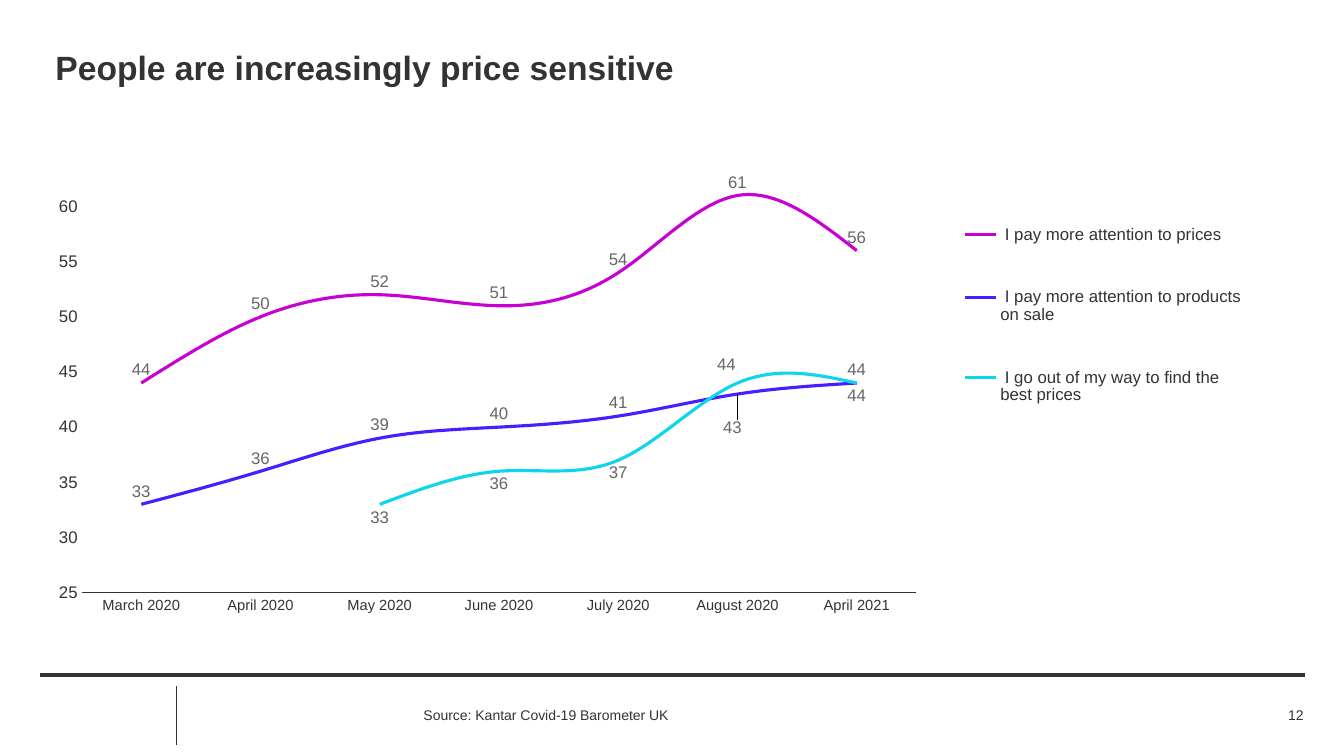
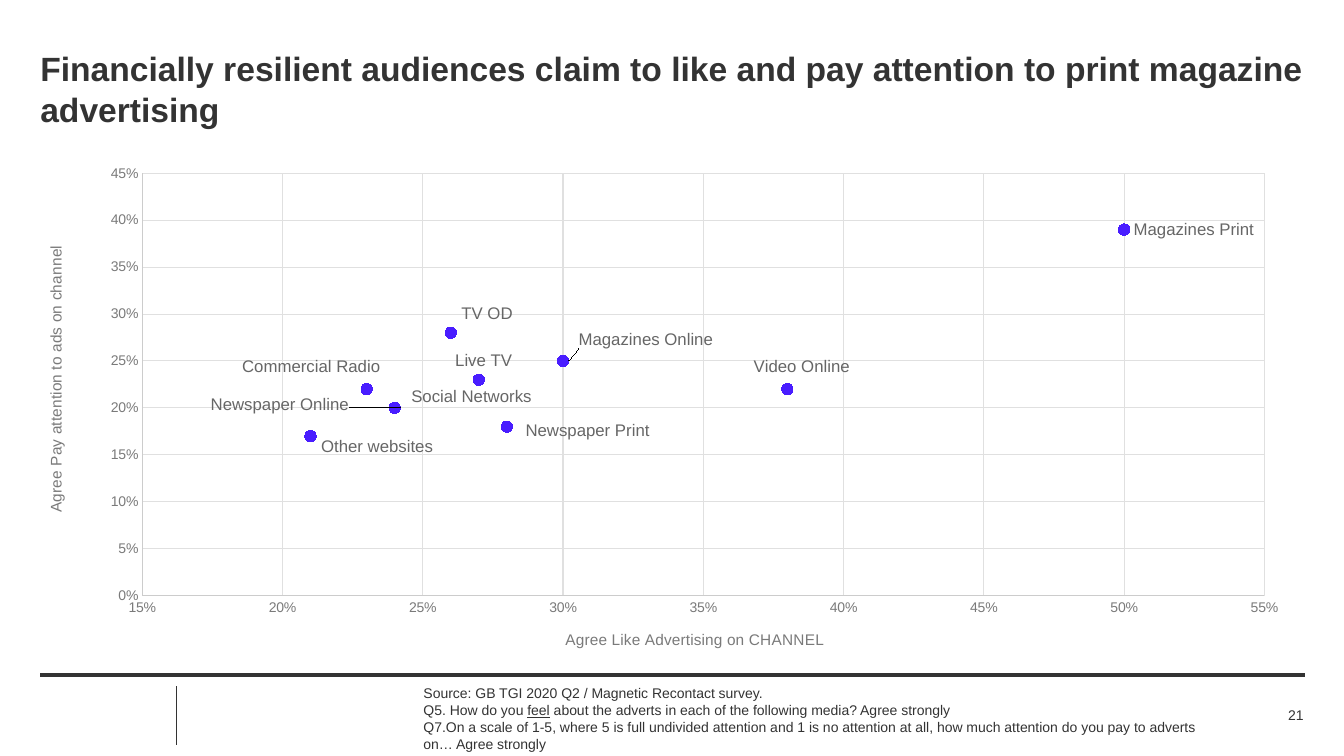
from lxml.etree import SubElement
from pptx import Presentation
from pptx.chart.data import CategoryChartData, XyChartData
from pptx.dml.color import RGBColor
from pptx.enum.chart import (XL_CHART_TYPE, XL_LABEL_POSITION, XL_LEGEND_POSITION,
                             XL_MARKER_STYLE, XL_TICK_MARK)
from pptx.enum.shapes import MSO_CONNECTOR
from pptx.enum.text import MSO_ANCHOR, MSO_AUTO_SIZE, PP_ALIGN
from pptx.oxml import parse_xml
from pptx.oxml.ns import nsdecls, qn
from pptx.util import Inches, Pt

INK = RGBColor(0x33, 0x33, 0x33)
LABEL_GREY = RGBColor(0x66, 0x66, 0x66)
AXIS_GREY = RGBColor(0x7A, 0x7A, 0x7A)
AXIS_LINE = RGBColor(0xCC, 0xCC, 0xCC)
GRID_LINE = RGBColor(0xE0, 0xE0, 0xE0)
MAGENTA = RGBColor(0xC7, 0x00, 0xD3)
VIOLET = RGBColor(0x49, 0x1D, 0xFF)
CYAN = RGBColor(0x0C, 0xD5, 0xED)
FONT = "Arial"
ABOVE, BELOW, RIGHT = (XL_LABEL_POSITION.ABOVE, XL_LABEL_POSITION.BELOW,
                       XL_LABEL_POSITION.RIGHT)
NO_LEADER_LINES = (
    f'<c:extLst {nsdecls("c")}><c:ext uri="{{CE6537A1-D6FC-4f65-9D91-7224C49458BB}}" '
    'xmlns:c15="http://schemas.microsoft.com/office/drawing/2012/chart">'
    '<c15:showLeaderLines val="0"/></c:ext></c:extLst>')

# Boxes are left, top, width, height in inches; label shifts are inches too.
PAGE_BOX = (11.87, 6.98, 1.06, 0.22)
FOOTER_RULES = [((1.75, 6.81), (1.75, 7.39), 1), ((0.4, 6.7), (12.94, 6.7), 3)]

PRICE = {
    "title": "People are increasingly price sensitive",
    "title_box": (0.55, 0.47, 12.54, 0.44),
    "source": [["Source: Kantar Covid-19 Barometer UK"]],
    "source_box": (4.2, 6.98, 7.58, 0.22),
    "page": "12",
    "chart_box": (0.31, 1.55, 12.31, 5.44),
    "plot_box": (0.81, 1.83, 8.28, 4.05),
    "legend_box": (9.5, 1.8, 2.88, 2.65),
    "months": ["March 2020", "April 2020", "May 2020", "June 2020", "July 2020",
               "August 2020", "April 2021"],
    # name, values, colour, label side, August label side and shift
    "answers": [
        (" I pay more attention to prices",
         (44, 50, 52, 51, 54, 61, 56), MAGENTA, ABOVE, None),
        (" I pay more attention to products on sale",
         (33, 36, 39, 40, 41, 43, 44), VIOLET, ABOVE, (BELOW, -0.05, 0.21)),
        (" I go out of my way to find the best prices",
         (None, None, 33, 36, 37, 44, 44), CYAN, BELOW, (ABOVE, -0.11, -0.05)),
    ],
}
AUGUST = PRICE["months"].index("August 2020")

MEDIA = {
    "title": "Financially resilient audiences claim to like and pay attention "
             "to print magazine advertising",
    "title_box": (0.4, 0.48, 12.54, 0.44),
    "source": [
        ["Source: GB TGI 2020 Q2 / Magnetic Recontact survey."],
        ["Q5. How do you ", ("feel",),
         " about the adverts in each of the following media? Agree strongly"],
        ["Q7.On a scale of 1-5, where 5 is full undivided attention and 1 is no attention "
         "at all, how much attention do you pay to adverts on… Agree strongly"],
    ],
    "source_box": (4.2, 6.98, 7.68, 0.29),
    "page": "21",
    "chart_box": (0.39, 1.54, 12.54, 5.11),
    "plot_box": (1.41, 1.72, 11.13, 4.19),
    # title, title box, minimum, maximum
    "axes": [
        ("Agree Like Advertising on CHANNEL", (5.58, 6.21, 2.57, 0.18), 0.15, 0.55),
        ("Agree Pay attention to ads on channel", (0.42, 2.41, 0.18, 2.66), 0, 0.45),
    ],
    # channel, like, attention, label shift
    "channels": [
        ("Magazines Online", 0.3, 0.25, (0.06, -0.21)),
        ("Live TV", 0.27, 0.23, (-0.33, -0.19)),
        ("TV OD", 0.26, 0.28, (0.01, -0.19)),
        ("Video Online", 0.38, 0.22, (-0.43, -0.22)),
        ("Magazines Print", 0.5, 0.39, (0, 0)),
        ("Newspaper Print", 0.28, 0.18, (0.09, 0.04)),
        ("Commercial Radio", 0.23, 0.22, (-1.33, -0.22)),
        ("Social Networks", 0.24, 0.2, (0.07, -0.11)),
        ("Newspaper Online", 0.24, 0.2, (-1.92, -0.03)),
        ("Other websites", 0.21, 0.17, (0.01, 0.11)),
    ],
}


def inches(box):
    return [Inches(length) for length in box]


def style_font(font, size, color=INK, **more):
    for name, value in {"name": FONT, "size": Pt(size), **more}.items():
        setattr(font, name, value)
    font.color.rgb = color


def style_line(line, color, width):
    line.color.rgb = color
    line.width = Pt(width)


def style_frame(frame, anchor):
    settings = {"word_wrap": True, "auto_size": MSO_AUTO_SIZE.NONE, "vertical_anchor": anchor,
                "margin_left": 0, "margin_top": 0, "margin_right": 0, "margin_bottom": 0}
    for name, value in settings.items():
        setattr(frame, name, value)


def set_layout(element, **values):
    """Give a chart part a manual layout, in shares of the chart."""
    for old in element.findall(qn("c:layout")):
        element.remove(old)
    layout = parse_xml(f"<c:layout {nsdecls('c')}><c:manualLayout/></c:layout>")
    for tag, value in values.items():
        SubElement(layout[0], qn(f"c:{tag}"), val=str(value))
    element.insert(0 if element.tag == qn("c:plotArea") else 1, layout)


def place(element, box, chart_box, **target):
    """Lay out a chart part from its box on the slide."""
    left, top, width, height = chart_box
    set_layout(element, **target, xMode="edge", yMode="edge",
               x=(box[0] - left) / width, y=(box[1] - top) / height,
               w=box[2] / width, h=box[3] / height)


def shift_label(chart, chart_box, series_number, point, dx, dy):
    label, = chart.element.xpath(
        f'.//c:ser[{series_number}]/c:dLbls/c:dLbl[c:idx/@val="{point}"]')
    set_layout(label, x=dx / chart_box[2], y=dy / chart_box[3])


def hide_leader_lines(chart):
    for labels in chart.element.xpath(".//c:ser/c:dLbls"):
        labels.append(parse_xml(NO_LEADER_LINES))


def style_axis(axis, size, color, low=None, high=None, step=None, number_format=None):
    axis.major_tick_mark = axis.minor_tick_mark = XL_TICK_MARK.NONE
    style_font(axis.tick_labels.font, size, color)
    if step:
        axis.minimum_scale, axis.maximum_scale, axis.major_unit = low, high, step
        axis.tick_labels.number_format = number_format
        axis.tick_labels.number_format_is_linked = False


def add_footer_rules(slide, layout):
    """Draw the footer rules and hand them to the layout."""
    for start, end, width in FOOTER_RULES:
        rule = slide.shapes.add_connector(MSO_CONNECTOR.STRAIGHT, *inches(start + end))
        style_line(rule.line, INK, width)
        SubElement(rule.element.spPr, qn("a:effectLst"))
        layout.shapes.element.append(rule.element)


def add_text(slide, box, paragraphs, align=PP_ALIGN.LEFT):
    """Each paragraph is a list of runs; a run in a tuple is underlined."""
    frame = slide.shapes.add_textbox(*inches(box)).text_frame
    style_frame(frame, MSO_ANCHOR.MIDDLE)
    for number, runs in enumerate(paragraphs):
        paragraph = frame.add_paragraph() if number else frame.paragraphs[0]
        paragraph.alignment = align
        for text in runs:
            run = paragraph.add_run()
            underlined = isinstance(text, tuple)
            run.text = text[0] if underlined else text
            style_font(run.font, 10, underline=underlined)


def add_page(deck, layout, content):
    slide = deck.slides.add_slide(layout)
    title = slide.shapes.title
    title.left, title.top, title.width, title.height = inches(content["title_box"])
    style_frame(title.text_frame, MSO_ANCHOR.TOP)
    title.text_frame.text = content["title"]
    heading = title.text_frame.paragraphs[0]
    heading.alignment = PP_ALIGN.LEFT
    style_font(heading.font, 24, bold=True)
    add_text(slide, content["source_box"], content["source"])
    add_text(slide, PAGE_BOX, [[content["page"]]], PP_ALIGN.RIGHT)
    return slide


def add_chart(slide, kind, content, data):
    chart = slide.shapes.add_chart(kind, *inches(content["chart_box"]), data).chart
    chart.has_title = chart.has_legend = False
    style_font(chart.font, 10)
    chart.plots[0].vary_by_categories = False
    plot_area, = chart.element.xpath(".//c:plotArea")
    place(plot_area, content["plot_box"], content["chart_box"], layoutTarget="inner")
    return chart


def add_price_chart(slide):
    data = CategoryChartData(number_format="0")
    data.categories = PRICE["months"]
    for name, values, *_ in PRICE["answers"]:
        data.add_series(name, values)
    chart = add_chart(slide, XL_CHART_TYPE.LINE, PRICE, data)

    style_axis(chart.category_axis, 10.5, INK)
    style_line(chart.category_axis.format.line, INK, 0.75)
    style_axis(chart.value_axis, 12, INK, 25, 62, 5, "0")
    chart.value_axis.has_major_gridlines = False
    chart.value_axis.format.line.fill.background()

    chart.has_legend = True
    chart.legend.position = XL_LEGEND_POSITION.BOTTOM
    chart.legend.include_in_layout = False
    style_font(chart.legend.font, 12)
    legend, = chart.element.xpath(".//c:legend")
    place(legend, PRICE["legend_box"], PRICE["chart_box"])

    for number, (series, answer) in enumerate(zip(chart.series, PRICE["answers"]), 1):
        color, side, august = answer[2:]
        series.smooth = True
        series.marker.style = XL_MARKER_STYLE.NONE
        style_line(series.format.line, color, 2.25)
        labels = series.data_labels
        labels.show_value = True
        labels.position = side
        style_font(labels.font, 12, LABEL_GREY)
        if august:
            august_side, dx, dy = august
            label = series.points[AUGUST].data_label
            style_font(label.font, 12, LABEL_GREY)
            label.position = august_side
            shift_label(chart, PRICE["chart_box"], number, AUGUST, dx, dy)
    hide_leader_lines(chart)


def add_media_chart(slide):
    data = XyChartData(number_format="0%")
    points = data.add_series("Series 1")
    for _, like, attention, _ in MEDIA["channels"]:
        points.add_data_point(like, attention)
    chart = add_chart(slide, XL_CHART_TYPE.XY_SCATTER, MEDIA, data)

    axes = (chart.category_axis, chart.value_axis)
    for axis, (text, box, low, high) in zip(axes, MEDIA["axes"]):
        style_axis(axis, 10, AXIS_GREY, low, high, 0.05, "0%")
        style_line(axis.format.line, AXIS_LINE, 0.75)
        axis.has_major_gridlines = True
        style_line(axis.major_gridlines.format.line, GRID_LINE, 0.75)
        frame = axis.axis_title.text_frame
        frame.text = text
        style_font(frame.paragraphs[0].runs[0].font, 11, AXIS_GREY, bold=False)
        place(axis.axis_title.element, box, MEDIA["chart_box"])
    turned, = chart.value_axis.axis_title.element.xpath(".//a:bodyPr")
    turned.set("rot", "-5400000")

    series = chart.series[0]
    series.format.line.fill.background()
    series.marker.style = XL_MARKER_STYLE.CIRCLE
    series.marker.size = 8
    series.marker.format.fill.solid()
    series.marker.format.fill.fore_color.rgb = VIOLET
    series.marker.format.line.color.rgb = VIOLET
    for point, (channel, _, _, shift) in enumerate(MEDIA["channels"]):
        label = series.points[point].data_label
        label.position = RIGHT
        label.text_frame.text = channel
        style_font(label.text_frame.paragraphs[0].runs[0].font, 12, LABEL_GREY)
        shift_label(chart, MEDIA["chart_box"], 1, point, *shift)
    hide_leader_lines(chart)


def main():
    deck = Presentation()
    deck.slide_width, deck.slide_height = Inches(13.33), Inches(7.5)
    layout = deck.slide_layouts[5]
    price_slide = add_page(deck, layout, PRICE)
    add_footer_rules(price_slide, layout)
    add_price_chart(price_slide)
    add_media_chart(add_page(deck, layout, MEDIA))
    deck.save("out.pptx")


if __name__ == "__main__":
    main()
